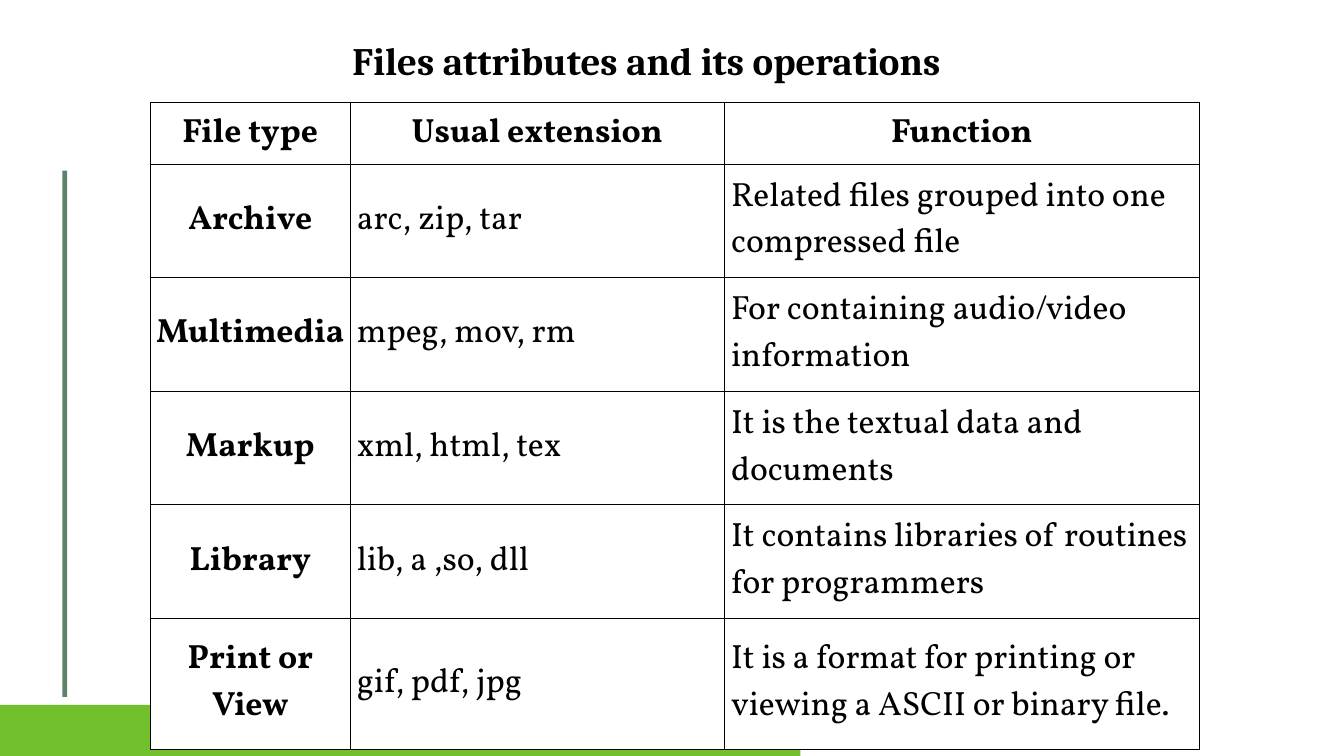
from pptx import Presentation
from pptx.dml.color import RGBColor
from pptx.enum.shapes import MSO_SHAPE
from pptx.enum.text import MSO_ANCHOR, PP_ALIGN
from pptx.oxml import parse_xml
from pptx.oxml.ns import nsdecls
from pptx.util import Inches, Pt

RECTANGLE = MSO_SHAPE.RECTANGLE
MIDDLE = MSO_ANCHOR.MIDDLE
LEFT, CENTER = PP_ALIGN.LEFT, PP_ALIGN.CENTER

BLACK = RGBColor(0x00, 0x00, 0x00)
WHITE = RGBColor(0xFF, 0xFF, 0xFF)
LIME = RGBColor(0x72, 0xC0, 0x2C)
SAGE = RGBColor(0x5F, 0x83, 0x68)

TITLE_FONT = {"name": "Cambria", "size": Pt(41.6), "bold": True}
HEADING_FONT = {"name": "Vollkorn", "size": Pt(36), "bold": True}
BODY_FONT = {**HEADING_FONT, "bold": False}

COLUMN_WIDTHS = [2.97, 5.57, 7.07]
ROW_HEIGHTS = [0.91, 1.69, 1.69, 1.69, 1.69, 1.95]
FILE_TYPES = [
    ("File type", "Usual extension", "Function"),
    ("Archive", "arc, zip, tar", "Related files grouped into one compressed file"),
    ("Multimedia", "mpeg, mov, rm", "For containing audio/video information"),
    ("Markup", "xml, html, tex", "It is the textual data and documents"),
    ("Library", "lib, a ,so, dll", "It contains libraries of routines for programmers"),
    ("Print or View", "gif, pdf, jpg",
     "It is a format for printing or viewing a ASCII or binary file."),
]


def write_text(paragraph, text, font_values, alignment):
    paragraph.alignment = alignment
    run = paragraph.add_run()
    run.text = text
    for attribute, value in font_values.items():
        setattr(run.font, attribute, value)
    run.font.color.rgb = BLACK


def add_bar(slide, left, top, width, height, color):
    bar = slide.shapes.add_shape(
        RECTANGLE, Inches(left), Inches(top), Inches(width), Inches(height))
    bar.shadow.inherit = False
    bar.fill.solid()
    bar.fill.fore_color.rgb = color
    bar.line.fill.background()


def add_title(slide, text):
    title = slide.shapes.add_textbox(
        Inches(2.11), Inches(0.57), Inches(15.02), Inches(0.77))
    title.text_frame.word_wrap = True
    heading = title.text_frame.paragraphs[0]
    heading.line_spacing = 0.9
    write_text(heading, text, TITLE_FONT, CENTER)


def add_borders(cell):
    properties = cell._tc.get_or_add_tcPr()
    for position, side in enumerate(("lnL", "lnR", "lnT", "lnB")):
        border = parse_xml(
            f'<a:{side} {nsdecls("a")} w="{Pt(1)}"><a:solidFill>'
            f'<a:srgbClr val="{BLACK}"/></a:solidFill></a:{side}>')
        properties.insert(position, border)


def fill_cell(cell, text, is_header, is_type):
    # Margins depend on the row and column
    side = Inches(0.04 if is_type else 0.1)
    vertical = Inches(0.1 if is_header else 0.07 if is_type else 0.15)
    layout = {"margin_left": side, "margin_right": side, "margin_top": vertical,
              "margin_bottom": vertical, "vertical_anchor": MIDDLE}
    for attribute, value in layout.items():
        setattr(cell, attribute, value)
    cell.fill.solid()
    cell.fill.fore_color.rgb = WHITE
    add_borders(cell)

    is_heading = is_header or is_type
    write_text(cell.text_frame.paragraphs[0], text,
               HEADING_FONT if is_heading else BODY_FONT,
               CENTER if is_heading else LEFT)


def add_file_table(slide):
    table = slide.shapes.add_table(
        len(ROW_HEIGHTS), len(COLUMN_WIDTHS), Inches(2.24), Inches(1.53),
        Inches(sum(COLUMN_WIDTHS)), Inches(sum(ROW_HEIGHTS))).table
    for column, width in zip(table.columns, COLUMN_WIDTHS):
        column.width = Inches(width)
    for row, height in zip(table.rows, ROW_HEIGHTS):
        row.height = Inches(height)
    for row_index, entries in enumerate(FILE_TYPES):
        for column_index, text in enumerate(entries):
            fill_cell(table.cell(row_index, column_index), text,
                      row_index == 0, column_index == 0)


def main():
    presentation = Presentation()
    presentation.slide_width = Inches(20)
    presentation.slide_height = Inches(11.25)
    slide = presentation.slides.add_slide(presentation.slide_layouts[6])

    # Footer band and side rule
    add_bar(slide, 0, 10.49, 11.91, 0.76, LIME)
    add_bar(slide, 0.93, 2.54, 0.07, 7.83, SAGE)

    # Title and table
    add_title(slide, "Files attributes and its operations")
    add_file_table(slide)

    presentation.save("out.pptx")


if __name__ == "__main__":
    main()
